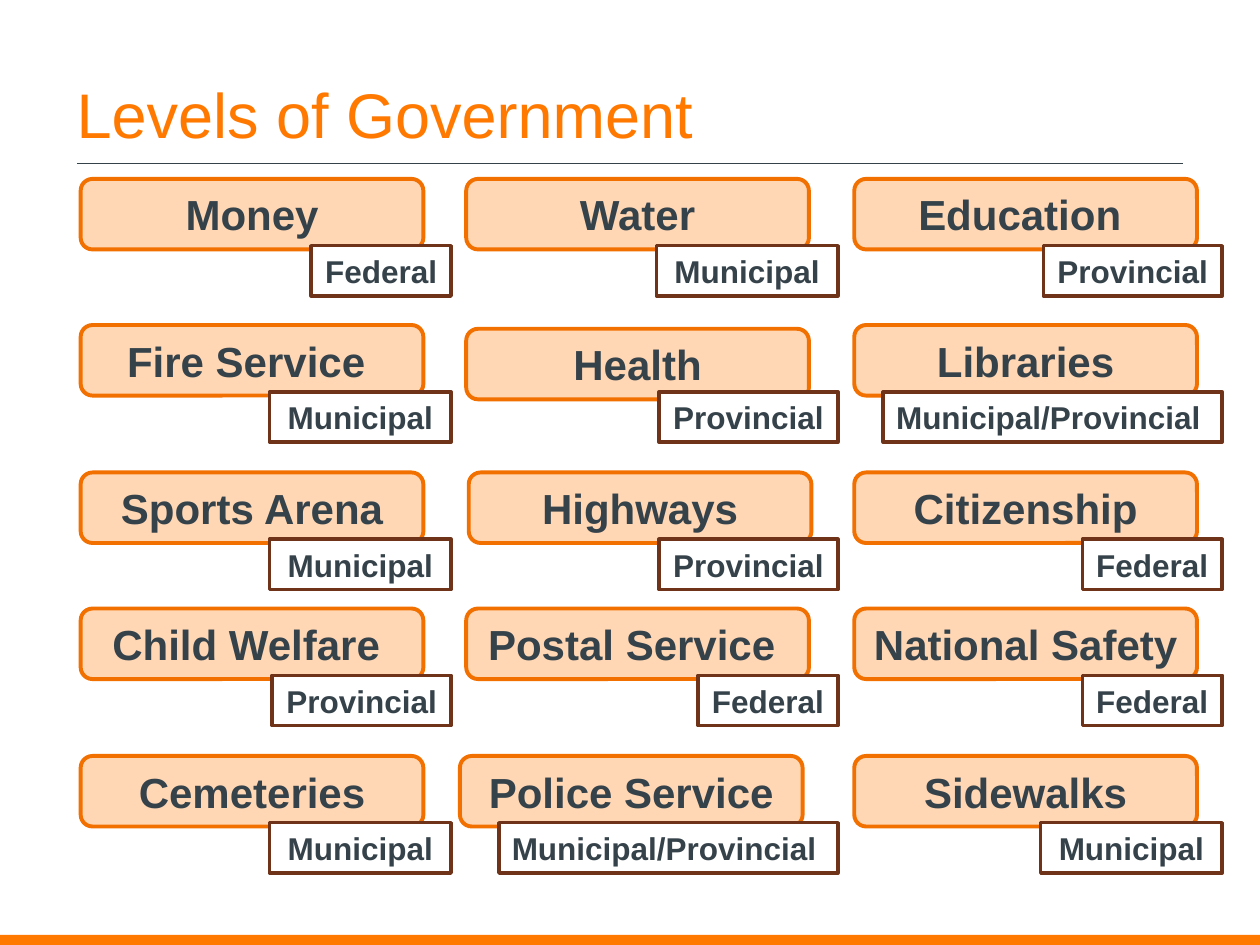
from dataclasses import dataclass

import pptx
import pptx.dml.color
import pptx.enum.shapes
import pptx.enum.text
import pptx.util
from lxml import etree
from pptx.dml.color import RGBColor
from pptx.util import Inches

ORANGE = RGBColor(0xFF, 0x79, 0x00)
DEEP_ORANGE = RGBColor(0xF2, 0x70, 0x00)
PEACH = RGBColor(0xFF, 0xD7, 0xB5)
BROWN = RGBColor(0x6E, 0x33, 0x19)
SLATE = RGBColor(0x36, 0x42, 0x4A)
WHITE = RGBColor(0xFF, 0xFF, 0xFF)

SHAPE = pptx.enum.shapes.MSO_SHAPE
ANCHOR = pptx.enum.text.MSO_ANCHOR

COLUMN_LEFTS = (0.64, 3.7, 6.78)
TAG_RIGHTS = (3.58, 6.65, 9.7)
ROW_TOPS = (1.42, 2.58, 3.75, 4.83, 6)
TAG_DROP = 0.53
TOPIC_WIDTH, TOPIC_HEIGHT, TAG_HEIGHT = 2.72, 0.56, 0.4
TAG_WIDTHS = {
    "Federal": 1.11,
    "Provincial": 1.42,
    "Municipal": 1.44,
    "Municipal/Provincial ": 2.69,
}


@dataclass(frozen=True)
class Topic:
    name: str
    level: str
    shift_x: float = 0
    shift_y: float = 0


@dataclass(frozen=True)
class BoxStyle:
    shape: SHAPE
    fill: RGBColor
    line: RGBColor
    line_width: float
    font_size: float
    wrap: bool


TOPIC_STYLE = BoxStyle(SHAPE.ROUNDED_RECTANGLE, PEACH, DEEP_ORANGE, 2.25, 24, True)
TAG_STYLE = BoxStyle(SHAPE.RECTANGLE, WHITE, BROWN, 2, 18, False)

TOPIC_ROWS = (
    (Topic("Money", "Federal"), Topic("Water", "Municipal"),
     Topic("Education ", "Provincial")),
    (Topic("Fire Service ", "Municipal"), Topic("Health", "Provincial", shift_y=0.03),
     Topic("Libraries", "Municipal/Provincial ")),
    (Topic("Sports Arena", "Municipal"), Topic("Highways", "Provincial", shift_x=0.02),
     Topic("Citizenship", "Federal")),
    (Topic("Child Welfare ", "Provincial"), Topic("Postal Service ", "Federal"),
     Topic("National Safety", "Federal")),
    (Topic("Cemeteries", "Municipal"),
     Topic("Police Service", "Municipal/Provincial ", shift_x=-0.05),
     Topic("Sidewalks", "Municipal")),
)


def set_font(paragraph, size: float, color: RGBColor, bold: bool = False) -> None:
    font = paragraph.font
    font.name = "Arial"
    font.size = pptx.util.Pt(size)
    font.bold = bold
    font.color.rgb = color


def add_box(page, style: BoxStyle, text: str, left: float, top: float,
            width: float, height: float) -> None:
    box = page.shapes.add_shape(
        style.shape, Inches(left), Inches(top), Inches(width), Inches(height))
    box.shadow.inherit = False
    box.fill.solid()
    box.fill.fore_color.rgb = style.fill
    box.line.color.rgb = style.line
    box.line.width = pptx.util.Pt(style.line_width)
    frame = box.text_frame
    frame.word_wrap = style.wrap
    frame.vertical_anchor = ANCHOR.MIDDLE
    para = frame.paragraphs[0]
    para.text = text
    para.alignment = pptx.enum.text.PP_ALIGN.CENTER
    set_font(para, style.font_size, SLATE, bold=True)


def add_frame(page) -> None:
    """Draw the footer bar, the title and the rule below it."""
    bar = page.shapes.add_shape(
        SHAPE.RECTANGLE, 0, Inches(7.42), Inches(10), Inches(0.08))
    bar.shadow.inherit = False
    bar.fill.solid()
    bar.fill.fore_color.rgb = ORANGE
    bar.line.fill.background()

    rule = page.shapes.add_connector(
        pptx.enum.shapes.MSO_CONNECTOR.STRAIGHT,
        Inches(0.61), Inches(1.3), Inches(9.39), Inches(1.3))
    rule.line.color.rgb = SLATE
    rule.line.width = pptx.util.Pt(0.75)
    etree.SubElement(rule._element.spPr, pptx.oxml.ns.qn("a:effectLst"))

    title = page.shapes.add_textbox(
        Inches(0.51), Inches(0.25), Inches(8.99), Inches(1))
    title.text_frame.word_wrap = True
    title.text_frame.vertical_anchor = ANCHOR.BOTTOM
    para = title.text_frame.paragraphs[0]
    para.text = "Levels of Government"
    set_font(para, 36, ORANGE)


def add_topic(page, topic: Topic, column: int, top: float) -> None:
    """Draw a topic with its level of government overlapping the lower right."""
    add_box(page, TOPIC_STYLE, topic.name, COLUMN_LEFTS[column] + topic.shift_x,
            top + topic.shift_y, TOPIC_WIDTH, TOPIC_HEIGHT)
    width = TAG_WIDTHS[topic.level]
    add_box(page, TAG_STYLE, topic.level, TAG_RIGHTS[column] - width,
            top + TAG_DROP, width, TAG_HEIGHT)


def main() -> None:
    deck = pptx.Presentation()
    deck.slide_width, deck.slide_height = Inches(10), Inches(7.5)
    page = deck.slides.add_slide(deck.slide_layouts[6])
    add_frame(page)
    for top, topics in zip(ROW_TOPS, TOPIC_ROWS):
        for column, topic in enumerate(topics):
            add_topic(page, topic, column, top)
    deck.save("out.pptx")


if __name__ == "__main__":
    main()
